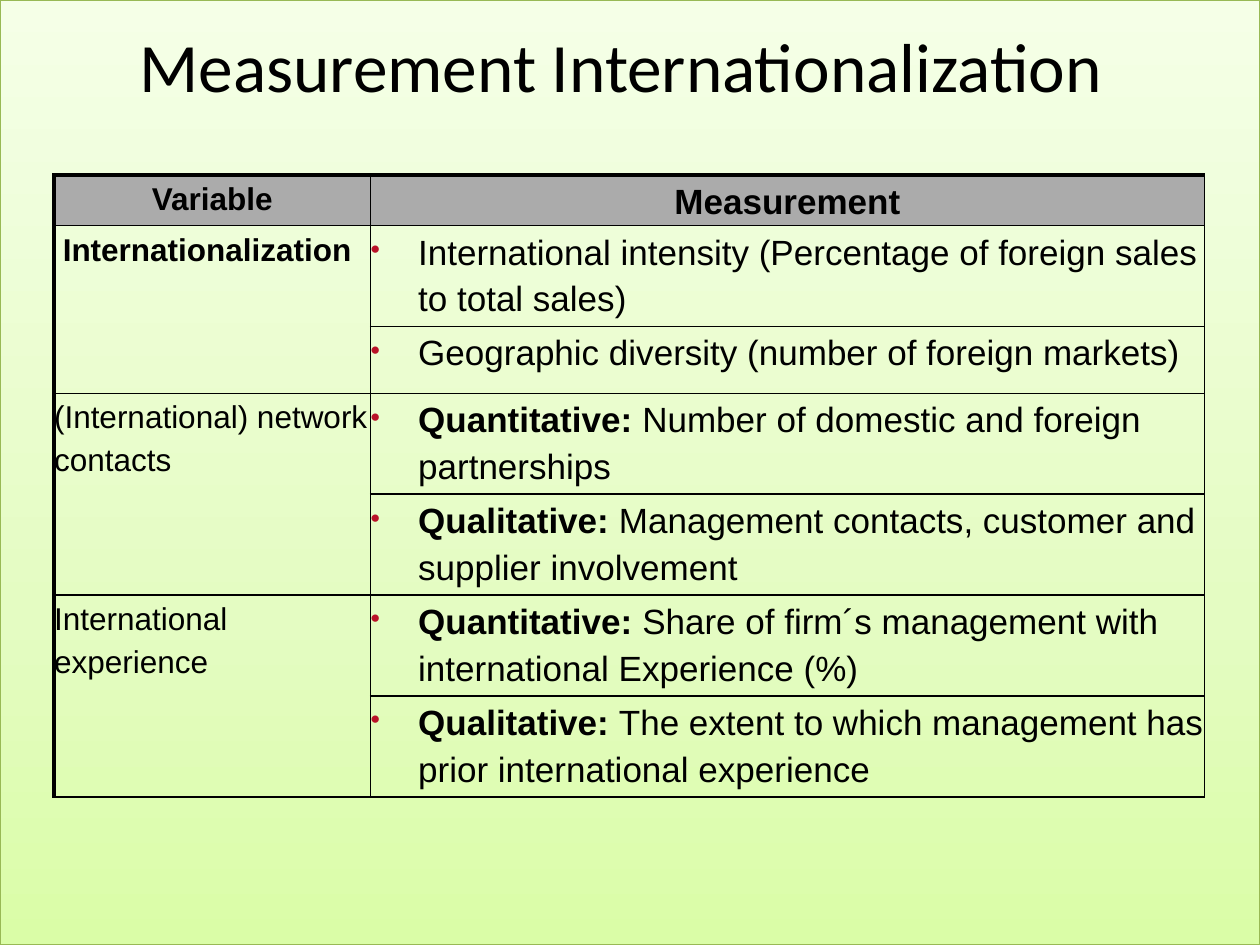
from copy import deepcopy
from dataclasses import dataclass

from lxml import etree
from pptx import Presentation
from pptx.dml.color import RGBColor
from pptx.enum.shapes import MSO_SHAPE
from pptx.enum.text import MSO_ANCHOR, PP_ALIGN
from pptx.oxml.ns import qn
from pptx.util import Cm, Pt

CENTER, LEFT = PP_ALIGN.CENTER, PP_ALIGN.LEFT
MIDDLE = MSO_ANCHOR.MIDDLE
RECTANGLE = MSO_SHAPE.RECTANGLE

PAGE_WIDTH, PAGE_HEIGHT = Cm(25.4), Cm(19.05)
BLACK, HEADER_GRAY, BULLET_RED = "000000", "ABABAB", "BA1229"
EDGE_GREEN = "98B955"
BACKDROP_STOPS = [(0, "DAFDA7"), (0.35, "E4FCC2"), (1, "F5FFE7")]
COLUMN_WIDTHS = [Cm(6.38), Cm(16.81)]
ROW_HEIGHTS = [Cm(h) for h in (0.92, 1.92, 1.35, 1.8, 1.92, 1.92, 1.92)]
HANGING = Cm(0.96)
THIN, THICK = Pt(1), Pt(2.25)
VARIABLE_SIZE, MEASURE_SIZE = 18, 20


@dataclass
class Measure:
    text: str
    lead: str = ""


@dataclass
class Variable:
    name: str
    measures: list[Measure]
    bold: bool = False


VARIABLES = [
    Variable(" Internationalization", [
        Measure("International intensity (Percentage of foreign sales to total sales)"),
        Measure("Geographic diversity (number of foreign markets)"),
    ], bold=True),
    Variable("(International) network contacts", [
        Measure("Number of domestic and foreign partnerships", "Quantitative: "),
        Measure("Management contacts, customer and supplier involvement", "Qualitative: "),
    ]),
    Variable("International experience", [
        Measure("Share of firm´s management with international Experience (%)", "Quantitative: "),
        Measure("The extent to which management has prior international experience", "Qualitative: "),
    ]),
]


def color(value: str) -> RGBColor:
    return RGBColor.from_string(value)


def add_span(para, text: str, size: float, bold: bool = False, font: str = "Arial") -> None:
    span = para.add_run()
    span.text = text
    span.font.name = font
    span.font.size = Pt(size)
    span.font.bold = bold
    span.font.color.rgb = color(BLACK)


def add_backdrop(page) -> None:
    backdrop = page.shapes.add_shape(RECTANGLE, 0, 0, PAGE_WIDTH, PAGE_HEIGHT)
    backdrop.shadow.inherit = False
    backdrop.line.color.rgb = color(EDGE_GREEN)
    backdrop.line.width = Pt(0.75)
    fill = backdrop.fill
    fill.gradient()
    fill.gradient_angle = 90
    stop_list = backdrop.element.find(".//" + qn("a:gsLst"))
    stop_list.append(deepcopy(stop_list[-1]))
    for stop, (position, value) in zip(fill.gradient_stops, BACKDROP_STOPS):
        stop.position = position
        stop.color.rgb = color(value)


def add_title(page, text: str) -> None:
    box = page.shapes.add_textbox(Cm(1.09), Cm(0.33), Cm(22.86), Cm(1.96))
    frame = box.text_frame
    frame.word_wrap = True
    frame.vertical_anchor = MIDDLE
    para = frame.paragraphs[0]
    para.alignment = CENTER
    add_span(para, text, 39.6, font="Calibri")


def add_borders(cell, left: int, top: int) -> None:
    properties = cell._tc.get_or_add_tcPr()
    for tag, width in (("a:lnL", left), ("a:lnR", THIN), ("a:lnT", top), ("a:lnB", THIN)):
        line = etree.SubElement(properties, qn(tag), w=str(width))
        solid = etree.SubElement(line, qn("a:solidFill"))
        etree.SubElement(solid, qn("a:srgbClr"), val=BLACK)


def add_bullet(para) -> None:
    properties = para._p.get_or_add_pPr()
    properties.set("marL", str(HANGING))
    properties.set("indent", str(-HANGING))
    bullet_color = etree.SubElement(properties, qn("a:buClr"))
    etree.SubElement(bullet_color, qn("a:srgbClr"), val=BULLET_RED)
    etree.SubElement(properties, qn("a:buSzPct"), val="80000")
    etree.SubElement(properties, qn("a:buChar"), char="•")


def start_paragraph(cell, alignment=LEFT):
    para = cell.text_frame.paragraphs[0]
    para.alignment = alignment
    para.line_spacing = 1.2
    return para


def style_cells(table) -> None:
    for row in range(len(ROW_HEIGHTS)):
        for column in range(len(COLUMN_WIDTHS)):
            cell = table.cell(row, column)
            cell.margin_left = cell.margin_right = 0
            cell.margin_top = cell.margin_bottom = 0
            add_borders(cell, THIN if column else THICK, THIN if row else THICK)
            if row:
                cell.fill.background()
            else:
                cell.fill.solid()
                cell.fill.fore_color.rgb = color(HEADER_GRAY)


def add_measure(cell, measure: Measure) -> None:
    para = start_paragraph(cell)
    add_bullet(para)
    if measure.lead:
        add_span(para, measure.lead, MEASURE_SIZE, bold=True)
    add_span(para, measure.text, MEASURE_SIZE)


def add_measurement_table(page) -> None:
    table = page.shapes.add_table(
        len(ROW_HEIGHTS), len(COLUMN_WIDTHS), Cm(1.09), Cm(3.53),
        sum(COLUMN_WIDTHS), sum(ROW_HEIGHTS)).table
    table.first_row = table.horz_banding = False
    for column, width in zip(table.columns, COLUMN_WIDTHS):
        column.width = width
    for row, height in zip(table.rows, ROW_HEIGHTS):
        row.height = height
    style_cells(table)

    headings = (("Variable", VARIABLE_SIZE), ("Measurement", MEASURE_SIZE))
    for column, (heading, size) in enumerate(headings):
        add_span(start_paragraph(table.cell(0, column), CENTER), heading, size, bold=True)

    row = 1
    for variable in VARIABLES:
        last = row + len(variable.measures) - 1
        name_cell = table.cell(row, 0)
        name_cell.merge(table.cell(last, 0))
        add_span(start_paragraph(name_cell), variable.name, VARIABLE_SIZE, variable.bold)
        for offset, measure in enumerate(variable.measures):
            add_measure(table.cell(row + offset, 1), measure)
        row = last + 1


def main() -> None:
    deck = Presentation()
    deck.slide_width, deck.slide_height = PAGE_WIDTH, PAGE_HEIGHT
    page = deck.slides.add_slide(deck.slide_layouts[6])
    add_backdrop(page)
    add_title(page, "Measurement Internationalization")
    add_measurement_table(page)
    deck.save("out.pptx")


if __name__ == "__main__":
    main()
